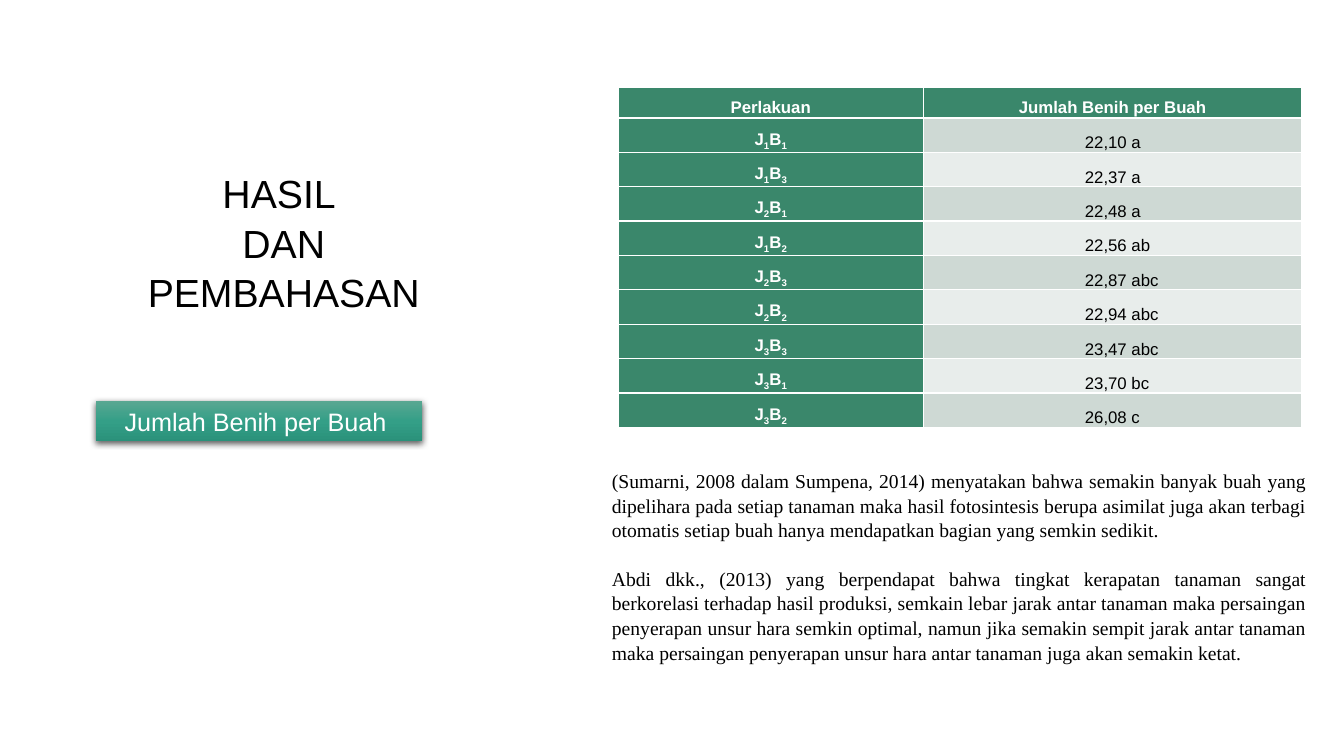
from pptx import Presentation
from pptx.dml.color import RGBColor
from pptx.enum.shapes import MSO_SHAPE
from pptx.enum.text import MSO_ANCHOR, PP_ALIGN
from pptx.oxml import parse_xml
from pptx.oxml.ns import nsdecls
from pptx.util import Inches, Pt

LEFT, CENTER, JUSTIFY = PP_ALIGN.LEFT, PP_ALIGN.CENTER, PP_ALIGN.JUSTIFY
MIDDLE, BOTTOM = MSO_ANCHOR.MIDDLE, MSO_ANCHOR.BOTTOM

TITLE = ["HASIL ", "DAN", "PEMBAHASAN"]
BANNER = "Jumlah Benih per Buah "
DISCUSSION = [
    "(Sumarni, 2008 dalam Sumpena, 2014) menyatakan bahwa semakin banyak buah yang "
    "dipelihara pada setiap tanaman maka hasil fotosintesis berupa asimilat juga akan "
    "terbagi otomatis setiap buah hanya mendapatkan bagian yang semkin sedikit.",
    "Abdi dkk., (2013) yang berpendapat bahwa tingkat kerapatan tanaman sangat "
    "berkorelasi terhadap hasil produksi, semkain lebar jarak antar tanaman maka "
    "persaingan penyerapan unsur hara semkin optimal, namun jika semakin sempit jarak "
    "antar tanaman maka persaingan penyerapan unsur hara antar tanaman juga akan "
    "semakin ketat.",
]
HEADER = ["Perlakuan", "Jumlah Benih per Buah"]
RESULTS = [
    ("J1B1", "22,10 a"),
    ("J1B3", "22,37 a"),
    ("J2B1", "22,48 a"),
    ("J1B2", "22,56 ab"),
    ("J2B3", "22,87 abc"),
    ("J2B2", "22,94 abc"),
    ("J3B3", "23,47 abc"),
    ("J3B1", "23,70 bc"),
    ("J3B2", "26,08 c"),
]

GREEN, BANDS = "3A876B", ("CED9D4", "E8EDEB")
BANNER_STOPS = [(0, "59A792"), (50, "349F87"), (100, "2A917A")]
COL_WIDTHS = (3.03, 3.75)
HEADER_HEIGHT, ROW_HEIGHT = 0.3, 0.34
VALUE_INDENT = 1.6

TITLE_FONT = {"name": "Arial", "size": Pt(28), "color": "000000"}
BANNER_FONT = {"name": "Arial", "size": Pt(18), "color": "FFFFFF"}
BODY_FONT = {"name": "Times New Roman", "size": Pt(14), "color": "000000"}
LABEL_FONT = {"name": "Arial", "size": Pt(12), "bold": True, "color": "FFFFFF"}
VALUE_FONT = {"name": "Arial", "size": Pt(12), "bold": False, "color": "000000"}


def rgb(hex_color):
    return RGBColor.from_string(hex_color)


def add_run(p, text, font):
    r = p.add_run()
    r.text = text
    for key, value in font.items():
        if key == "color":
            r.font.color.rgb = rgb(value)
        else:
            setattr(r.font, key, value)
    return r


def add_paragraphs(tf, lines, font, **para):
    tf.word_wrap = True
    for i, line in enumerate(lines):
        p = tf.paragraphs[0] if i == 0 else tf.add_paragraph()
        for key, value in para.items():
            setattr(p, key, value)
        add_run(p, line, font)


def add_text(slide, box, lines, font, **para):
    sp = slide.shapes.add_textbox(*map(Inches, box))
    add_paragraphs(sp.text_frame, lines, font, **para)
    return sp


def add_banner(slide, box):
    """Rectangle with a vertical three-stop gradient and a soft drop shadow."""
    sp = slide.shapes.add_shape(MSO_SHAPE.RECTANGLE, *map(Inches, box))
    sp.line.fill.background()
    stops = "".join(
        f'<a:gs pos="{pos * 1000}"><a:srgbClr val="{color}"/></a:gs>'
        for pos, color in BANNER_STOPS
    )
    ns = nsdecls("a")
    props = sp._element.spPr
    props.insert(2, parse_xml(
        f'<a:gradFill {ns} rotWithShape="1"><a:gsLst>{stops}</a:gsLst>'
        '<a:lin ang="5400000" scaled="0"/></a:gradFill>'
    ))
    props.append(parse_xml(
        f'<a:effectLst {ns}><a:outerShdw blurRad="{Pt(4.5)}" dist="{Pt(1.5)}" '
        'dir="5400000" algn="ctr" rotWithShape="0"><a:srgbClr val="000000">'
        '<a:alpha val="63000"/></a:srgbClr></a:outerShdw></a:effectLst>'
    ))
    add_paragraphs(sp.text_frame, [BANNER], BANNER_FONT, alignment=CENTER)


def style_cell(cell, fill, anchor, align, indent=0.07):
    """Format the cell and return its paragraph."""
    cell.fill.solid()
    cell.fill.fore_color.rgb = rgb(fill)
    margins = {"left": indent, "right": 0.07, "top": 0, "bottom": 0}
    for side, value in margins.items():
        setattr(cell, f"margin_{side}", Inches(value))
    cell.vertical_anchor = anchor
    p = cell.text_frame.paragraphs[0]
    p.alignment = align
    p.line_spacing = 1.5
    return p


def add_results(slide, left, top):
    height = HEADER_HEIGHT + ROW_HEIGHT * len(RESULTS)
    box = (left, top, sum(COL_WIDTHS), height)
    table = slide.shapes.add_table(
        len(RESULTS) + 1, len(HEADER), *map(Inches, box)
    ).table
    for column, width in zip(table.columns, COL_WIDTHS):
        column.width = Inches(width)
    for i, row in enumerate(table.rows):
        row.height = Inches(ROW_HEIGHT if i else HEADER_HEIGHT)
    for i, text in enumerate(HEADER):
        add_run(style_cell(table.cell(0, i), GREEN, MIDDLE, CENTER), text, LABEL_FONT)
    for i, (label, value) in enumerate(RESULTS, 1):
        p = style_cell(table.cell(i, 0), GREEN, MIDDLE, CENTER)
        for char in label:
            r = add_run(p, char, LABEL_FONT)
            if char.isdigit():
                r.font._element.set("baseline", "-25000")
        band = BANDS[(i - 1) % 2]
        p = style_cell(table.cell(i, 1), band, BOTTOM, LEFT, VALUE_INDENT)
        add_run(p, value, VALUE_FONT)


def main():
    prs = Presentation()
    prs.slide_width, prs.slide_height = Inches(13.33), Inches(7.5)
    slide = prs.slides.add_slide(prs.slide_layouts[6])
    add_banner(slide, (0.95, 3.98, 3.24, 0.4))
    add_text(slide, (1.25, 1.61, 3.13, 1.51), TITLE, TITLE_FONT,
             alignment=CENTER, line_spacing=1.05)
    body = add_text(slide, (5.97, 4.59, 7.09, 1.99), DISCUSSION, BODY_FONT,
                    alignment=JUSTIFY, line_spacing=1.05)
    body.text_frame.paragraphs[1].space_before = Pt(17)
    add_results(slide, 6.13, 0.87)
    prs.save("out.pptx")


if __name__ == "__main__":
    main()
